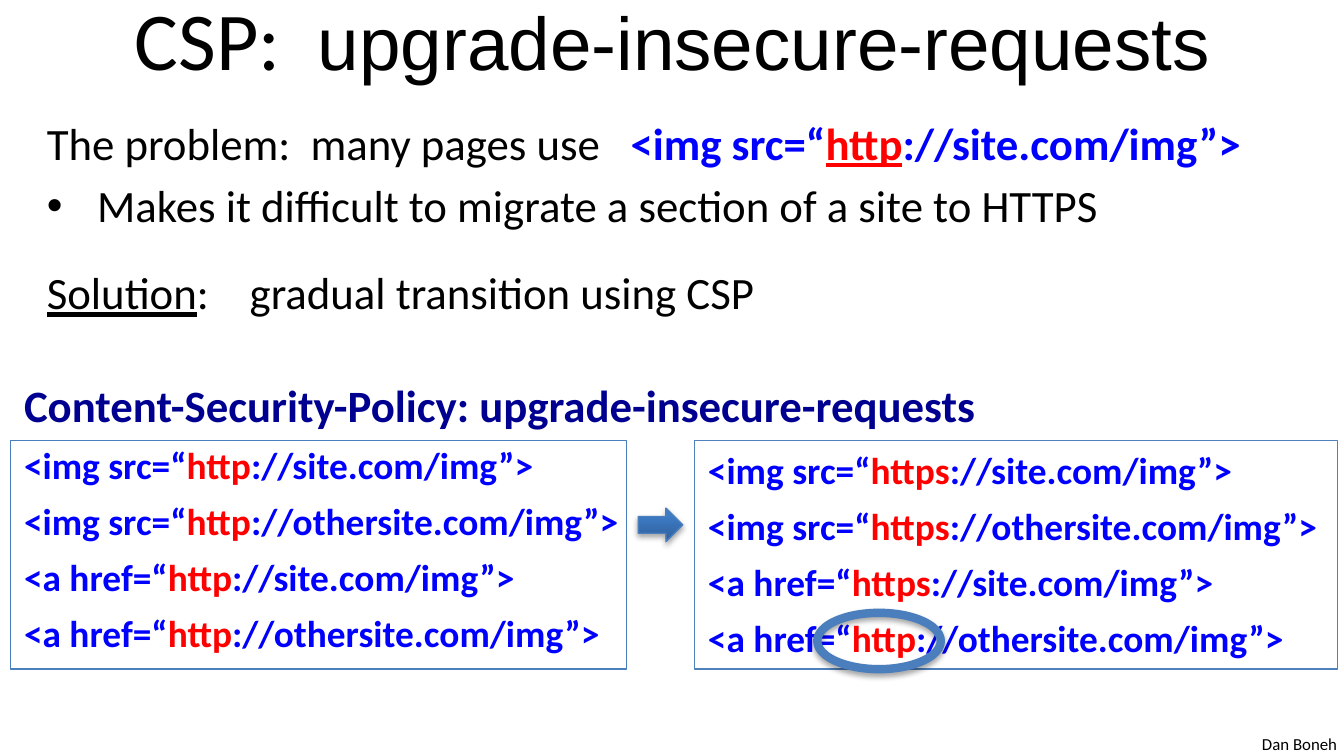
from lxml import etree
from pptx import Presentation
from pptx.dml.color import RGBColor
from pptx.enum.shapes import MSO_SHAPE
from pptx.enum.text import MSO_ANCHOR, PP_ALIGN
from pptx.oxml.ns import qn
from pptx.util import Pt

RECT = MSO_SHAPE.RECTANGLE
ARROW = MSO_SHAPE.RIGHT_ARROW
OVAL = MSO_SHAPE.OVAL
TOP, MIDDLE = MSO_ANCHOR.TOP, MSO_ANCHOR.MIDDLE
LEFT, CENTER = PP_ALIGN.LEFT, PP_ALIGN.CENTER

COLORS = {
    "black": "000000",
    "blue": "0000FF",
    "red": "FF0000",
    "navy": "000090",
    "line": "4B7EBC",
    "panel": "4F81BD",
    "arrow_dark": "2F5F99",
    "arrow_light": "3D7CC7",
}


def rgb(name):
    return RGBColor.from_string(COLORS[name])


def run(text, color="black", **fmt):
    return text, color, fmt


class SlideBuilder:
    font = {"name": "Calibri", "size": Pt(24), "bold": False, "underline": False}

    def __init__(self, slide):
        self.slide = slide

    def paragraph(self, tf, runs, first, before=0, align=LEFT, indent=0, tab=0):
        p = tf.paragraphs[0] if first else tf.add_paragraph()
        for key, value in {"alignment": align, "space_before": Pt(before)}.items():
            setattr(p, key, value)
        pPr = p._p.get_or_add_pPr()
        if indent:
            pPr.set("marL", str(Pt(indent)))
            pPr.set("indent", str(-Pt(indent)))
            etree.SubElement(pPr, qn("a:buFont"), typeface="Arial")
            etree.SubElement(pPr, qn("a:buChar"), char="•")
        if tab:
            tabs = etree.SubElement(pPr, qn("a:tabLst"))
            etree.SubElement(tabs, qn("a:tab"), pos=str(Pt(tab)), algn="l")
        for text, color, fmt in runs:
            r = p.add_run()
            r.text = text
            for key, value in {**self.font, **fmt}.items():
                setattr(r.font, key, value)
            r.font.color.rgb = rgb(color)

    def fill_text(self, sp, paragraphs, anchor=TOP):
        tf = sp.text_frame
        for key, value in {"word_wrap": True, "vertical_anchor": anchor}.items():
            setattr(tf, key, value)
        for i, (runs, fmt) in enumerate(paragraphs):
            self.paragraph(tf, runs, i == 0, **fmt)

    def text(self, box, paragraphs, anchor=TOP):
        sp = self.slide.shapes.add_textbox(*map(Pt, box))
        self.fill_text(sp, paragraphs, anchor)

    def shape(self, kind, box, line="line", width=0.75, shadow=False):
        sp = self.slide.shapes.add_shape(kind, *map(Pt, box))
        sp.fill.background()
        sp.line.color.rgb = rgb(line)
        sp.line.width = Pt(width)
        sp.shadow.inherit = False
        if shadow:
            self.shadow(sp)
        return sp

    def shadow(self, sp):
        effects = sp._element.spPr.find(qn("a:effectLst"))
        outer = etree.SubElement(effects, qn("a:outerShdw"), blurRad=str(Pt(3.1)),
                                 dist=str(Pt(1.8)), dir="5400000", rotWithShape="0")
        color = etree.SubElement(outer, qn("a:srgbClr"), val=COLORS["black"])
        etree.SubElement(color, qn("a:alpha"), val="35000")

    def gradient(self, sp, stops, angle):
        sp.fill.gradient()
        sp.fill.gradient_angle = angle
        for stop, (position, color) in zip(sp.fill.gradient_stops, stops):
            stop.position = position
            stop.color.rgb = rgb(color)


def tag_runs(start, scheme, host, **fmt):
    return [
        run(f"<{start}=“", "blue", bold=True, **fmt),
        run(scheme, "red", bold=True, **fmt),
        run(f"://{host}/img”>", "blue", bold=True, **fmt),
    ]


def tag_list(schemes):
    tags = [(start, host) for start in ("img src", "a href")
            for host in ("site.com", "othersite.com")]
    return [(tag_runs(start, scheme, host, size=Pt(20)), {"before": 6})
            for (start, host), scheme in zip(tags, schemes)]


def main():
    prs = Presentation()
    prs.slide_width, prs.slide_height = Pt(720), Pt(405)
    s = SlideBuilder(prs.slides.add_slide(prs.slide_layouts[6]))

    s.text((669, 389.5, 55, 18), [([run("Dan Boneh", size=Pt(9))], {})])
    title = [run("CSP:  ", size=Pt(44)),
             run("upgrade-insecure-requests", size=Pt(40), name="Arial")]
    s.text((36, -13.7, 648, 67.7), [(title, {"align": CENTER})], MIDDLE)

    before, scheme, after = tag_runs("img src", "http", "site.com")
    scheme[2]["underline"] = True
    s.text((18, 58.3, 690, 122.4), [
        ([run("The problem:  many pages use\t"), before, scheme, after],
         {"before": 4.8, "tab": 312.8}),
        ([run("Makes it difficult to migrate a section of a site to HTTPS")],
         {"before": 4.8, "indent": 27}),
        ([run("Solution", underline=True), run(":\tgradual transition using CSP")],
         {"before": 17.8, "tab": 108.7}),
    ])

    top, height = 236, 122.4
    sp = s.shape(RECT, (372.2, top, 344.2, height), line="panel")
    upgraded = tag_list(["https"] * 3 + ["http"])
    upgraded[0][1]["before"] = 0
    s.fill_text(sp, upgraded)

    header = run("Content-Security-Policy: upgrade-insecure-requests", "navy", bold=True)
    s.text((5.8, 198.7, 532.8, 157.7), [([header], {})] + tag_list(["http"] * 4))
    s.shape(RECT, (5.8, top, 330, height))

    sp = s.shape(ARROW, (342, 272.2, 23.8, 18), shadow=True)
    s.gradient(sp, [(0, "arrow_dark"), (0.8, "arrow_light")], 90)
    s.shape(OVAL, (437.8, 328.3, 66.2, 30.2), width=4.5, shadow=True)

    prs.save("out.pptx")


if __name__ == "__main__":
    main()
